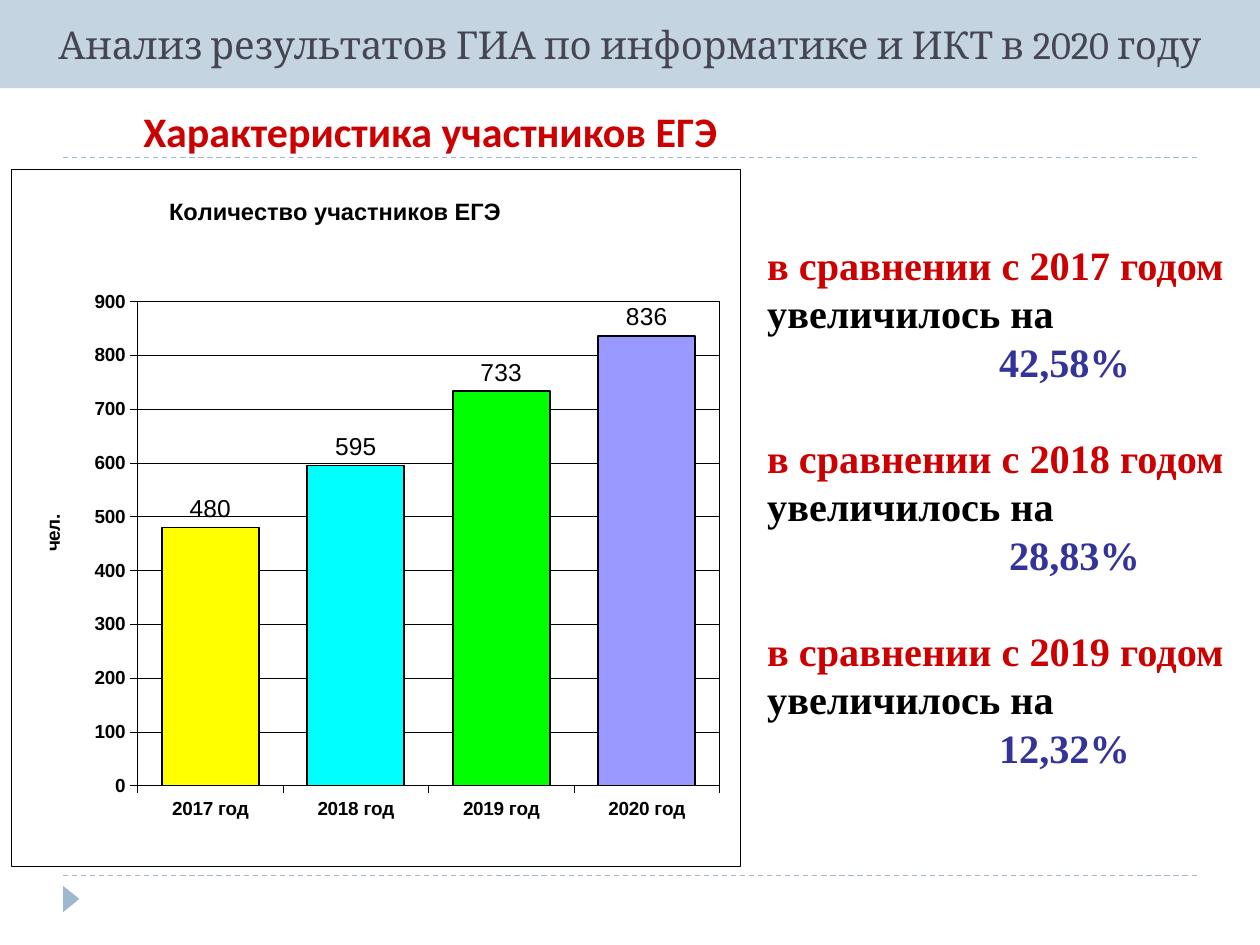
from dataclasses import dataclass
from typing import Optional

from lxml.etree import SubElement
from pptx import Presentation
from pptx.chart.data import CategoryChartData
from pptx.dml.color import RGBColor
from pptx.enum.chart import XL_CHART_TYPE, XL_LABEL_POSITION, XL_TICK_MARK
from pptx.enum.dml import MSO_LINE
from pptx.enum.shapes import MSO_CONNECTOR, MSO_SHAPE
from pptx.enum.text import MSO_ANCHOR, PP_ALIGN
from pptx.oxml import parse_xml
from pptx.oxml.ns import nsdecls, qn
from pptx.util import Inches, Pt

BLACK = RGBColor(0x00, 0x00, 0x00)
WHITE = RGBColor(0xFF, 0xFF, 0xFF)
RED = RGBColor(0xCC, 0x00, 0x00)
INDIGO = RGBColor(0x33, 0x33, 0x99)
SLATE = RGBColor(0x46, 0x46, 0x53)
STEEL = RGBColor(0x9F, 0xB8, 0xCD)
BAND = RGBColor(0xC5, 0xD4, 0xE1)
YELLOW = RGBColor(0xFF, 0xFF, 0x00)
CYAN = RGBColor(0x00, 0xFF, 0xFF)
GREEN = RGBColor(0x00, 0xFF, 0x00)
LILAC = RGBColor(0x99, 0x99, 0xFF)

WIDTH, HEIGHT = Inches(10), Inches(7.5)
RULE_ROWS = (1.25, 6.95)


@dataclass(frozen=True)
class YearResult:
    year: int
    participants: int
    color: RGBColor


@dataclass(frozen=True)
class Growth:
    year: int
    percent: str
    indent: float


RESULTS = (
    YearResult(2017, 480, YELLOW),
    YearResult(2018, 595, CYAN),
    YearResult(2019, 733, GREEN),
    YearResult(2020, 836, LILAC),
)
GROWTHS = (
    Growth(2017, "42,58%", 1.84),
    Growth(2018, "28,83%", 1.92),
    Growth(2019, "12,32%", 1.84),
)


def write(para, text: str, *, font: str, size: float, color: RGBColor,
          bold: bool = False, align: Optional[PP_ALIGN] = None,
          before: float = 0, indent: float = 0) -> None:
    span = para.add_run()
    span.text = text
    span.font.name = font
    span.font.size = Pt(size)
    span.font.bold = bold
    span.font.color.rgb = color
    if align is not None:
        para.alignment = align
    if before:
        para.space_before = Pt(before)
    if indent:
        properties = para._p.get_or_add_pPr()
        properties.set("marL", str(Inches(indent)))
        properties.set("indent", "0")


def add_rule(slide, row: float) -> None:
    rule = slide.shapes.add_connector(
        MSO_CONNECTOR.STRAIGHT, Inches(0.5), Inches(row), WIDTH - Inches(0.5), Inches(row))
    rule.line.color.rgb = STEEL
    rule.line.width = Pt(0.75)
    rule.line.dash_style = MSO_LINE.DASH
    SubElement(rule._element.spPr, qn("a:effectLst"))


def add_filled(slide, kind: MSO_SHAPE, left: float, top: float,
               width: float, height: float, color: RGBColor):
    shape = slide.shapes.add_shape(
        kind, Inches(left), Inches(top), Inches(width), Inches(height))
    shape.shadow.inherit = False
    shape.fill.solid()
    shape.fill.fore_color.rgb = color
    shape.line.fill.background()
    return shape


def add_text_box(slide, left: float, top: float, width: float, height: float, wrap: bool):
    box = slide.shapes.add_textbox(
        Inches(left), Inches(top), Inches(width), Inches(height))
    box.text_frame.word_wrap = wrap
    return box.text_frame


def add_growths(slide) -> None:
    frame = add_text_box(slide, 5.99, 1.86, 3.92, 4.36, True)
    style = dict(font="Times New Roman", size=23, bold=True)
    for index, growth in enumerate(GROWTHS):
        para = frame.add_paragraph() if index else frame.paragraphs[0]
        write(para, f"в сравнении с {growth.year} годом", color=RED,
              before=27.5 if index else 0, **style)
        write(frame.add_paragraph(), "увеличилось на", color=BLACK, **style)
        write(frame.add_paragraph(), growth.percent, color=INDIGO,
              indent=growth.indent, **style)


def layout_xml(left: float, top: float, width: float = 0, height: float = 0):
    target = '<c:layoutTarget val="inner"/>' if width else ""
    sides = {"x": left, "y": top}
    modes = "".join(f'<c:{side}Mode val="edge"/>' for side in sides)
    if width:
        sides.update(w=width, h=height)
    values = "".join(f'<c:{side} val="{value}"/>' for side, value in sides.items())
    return parse_xml(f'<c:layout {nsdecls("c")}><c:manualLayout>'
                     f'{target}{modes}{values}</c:manualLayout></c:layout>')


def frame_xml(fill: str):
    return parse_xml(f'<c:spPr {nsdecls("c", "a")}>{fill}<a:ln w="{Pt(0.25)}"><a:solidFill>'
                     f'<a:srgbClr val="{BLACK}"/></a:solidFill></a:ln></c:spPr>')


def clear_layout(element) -> None:
    for layout in element.findall(qn("c:layout")):
        element.remove(layout)


def set_title(title, text: str, size: float, left: float, top: float) -> None:
    write(title.text_frame.paragraphs[0], text, font="Arial", size=size,
          color=BLACK, bold=True)
    element = title._element
    clear_layout(element)
    element.find(qn("c:tx")).addnext(layout_xml(left, top))


def style_line(line, width: float) -> None:
    line.color.rgb = BLACK
    line.width = Pt(width)


def style_font(font, size: float, bold: bool = False) -> None:
    font.name = "Arial"
    font.size = Pt(size)
    font.bold = bold
    font.color.rgb = BLACK


def add_participants_chart(slide) -> None:
    data = CategoryChartData()
    data.categories = [f"{result.year} год" for result in RESULTS]
    data.add_series("Участники", [result.participants for result in RESULTS])
    chart = slide.shapes.add_chart(
        XL_CHART_TYPE.COLUMN_CLUSTERED, Inches(0.09), Inches(1.34),
        Inches(5.79), Inches(5.54), data).chart
    style_font(chart.font, 8)
    chart.has_legend = False
    chart.has_title = True
    set_title(chart.chart_title, "Количество участников ЕГЭ", 13.5, 0.21, 0.034)

    for axis in (chart.category_axis, chart.value_axis):
        style_font(axis.tick_labels.font, 10.8, True)
        style_line(axis.format.line, 0.25)
        axis.major_tick_mark = XL_TICK_MARK.OUTSIDE
    values = chart.value_axis
    values.minimum_scale, values.maximum_scale, values.major_unit = 0, 900, 100
    style_line(values.major_gridlines.format.line, 0.25)
    values.has_title = True
    set_title(values.axis_title, "чел.", 10.8, 0.035, 0.49)

    plot = chart.plots[0]
    plot.gap_width = 50
    plot.vary_by_categories = False
    series = plot.series[0]
    for index, result in enumerate(RESULTS):
        bar = series.points[index].format
        bar.fill.solid()
        bar.fill.fore_color.rgb = result.color
        style_line(bar.line, 1)
    plot.has_data_labels = True
    labels = plot.data_labels
    labels.show_value = True
    labels.position = XL_LABEL_POSITION.OUTSIDE_END
    style_font(labels.font, 14)

    space = chart._chartSpace
    area = space.chart.plotArea
    clear_layout(area)
    area.insert(0, layout_xml(0.173, 0.19, 0.798, 0.694))
    area.append(frame_xml("<a:noFill/>"))
    space.chart.addnext(frame_xml(
        f'<a:solidFill><a:srgbClr val="{WHITE}"/></a:solidFill>'))


def main() -> None:
    deck = Presentation()
    deck.slide_width, deck.slide_height = WIDTH, HEIGHT
    slide = deck.slides.add_slide(deck.slide_layouts[6])
    for row in RULE_ROWS:
        add_rule(slide, row)
    add_filled(slide, MSO_SHAPE.ISOSCELES_TRIANGLE, 0.46, 7.07, 0.21, 0.13, STEEL).rotation = 90
    header = add_filled(slide, MSO_SHAPE.RECTANGLE, 0, 0, 10, 0.7, BAND).text_frame
    header.word_wrap = True
    header.vertical_anchor = MSO_ANCHOR.MIDDLE
    write(header.paragraphs[0], "Анализ результатов ГИА по информатике и ИКТ в 2020 году",
          font="Cambria", size=22, color=SLATE, align=PP_ALIGN.CENTER)
    subtitle = add_text_box(slide, 0.99, 0.79, 4.85, 0.5, False)
    write(subtitle.paragraphs[0], "Характеристика участников ЕГЭ", font="Calibri",
          size=24, color=RED, bold=True, align=PP_ALIGN.CENTER)
    add_growths(slide)
    add_participants_chart(slide)
    deck.save("out.pptx")


if __name__ == "__main__":
    main()
